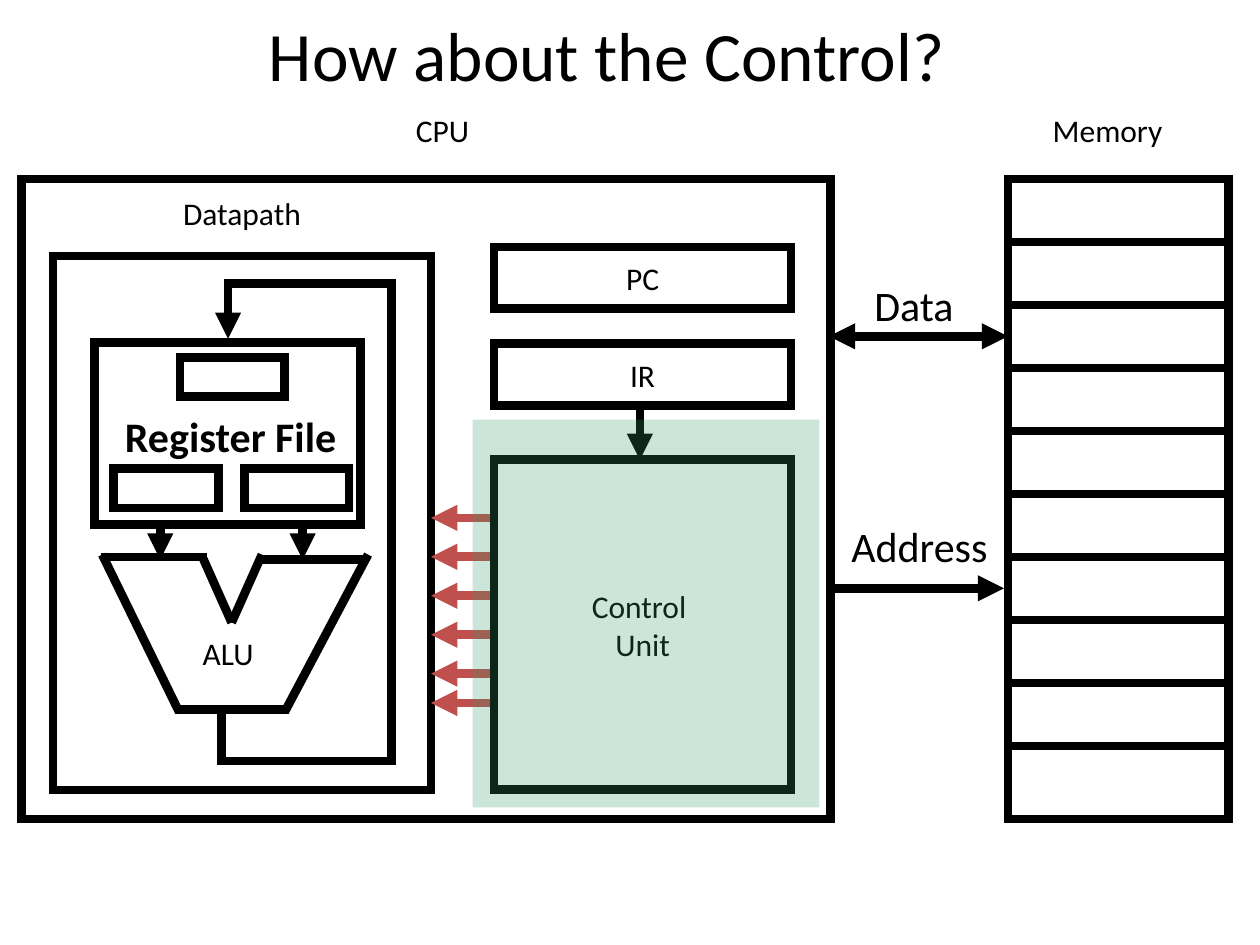
from dataclasses import dataclass

from lxml import etree
from pptx import Presentation
from pptx.dml.color import RGBColor
from pptx.enum.shapes import MSO_CONNECTOR, MSO_SHAPE
from pptx.enum.text import MSO_ANCHOR, PP_ALIGN
from pptx.oxml.ns import qn
from pptx.util import Cm, Pt

STRAIGHT = MSO_CONNECTOR.STRAIGHT
RECTANGLE = MSO_SHAPE.RECTANGLE
MIDDLE, TOP = MSO_ANCHOR.MIDDLE, MSO_ANCHOR.TOP
CENTER = PP_ALIGN.CENTER


@dataclass(frozen=True)
class Theme:
    font: str = "Calibri"
    ink: str = "000000"
    paper: str = "FFFFFF"
    signal: str = "C0504D"
    highlight: str = "339966"
    highlight_opacity: int = 25
    title: float = 39.6
    large: float = 24
    body: float = 18
    stroke: float = 5


THEME = Theme()

TITLE = ("How about the Control?", (2.29, 0.43, 19.89, 1.32))
REGISTER_LABEL = ("Register File", (0.89, 8.15, 7.52, 1.27))
ALU_LABEL = ("ALU", (2.11, 12.65, 4.98, 1.02))
SECTION_LABELS = [
    ("Datapath", (1.07, 3.78, 7.62, 1.02)),
    ("CPU ", (4.45, 2.11, 9.09, 1.02)),
    ("Memory ", (20.24, 2.11, 4.32, 1.02)),
]
BUS_LABELS = [
    ("Data", (16.94, 5.51, 2.97, 1.27)),
    ("Address", (16.31, 10.36, 4.45, 1.27)),
]

ALU_EDGES = [
    (2.03, 11.23, 4.17, 11.23),
    (5.28, 11.28, 7.42, 11.28),
    (3.53, 14.3, 5.82, 14.3),
    (3.61, 14.35, 2.06, 11.18),
    (7.42, 11.18, 5.74, 14.35),
    (4.06, 11.18, 4.67, 12.55),
    (4.67, 12.55, 5.28, 11.18),
]
REGISTER_FILE = (1.91, 6.91, 5.36, 3.66)
REGISTER_SIZE = (2.11, 0.79)
REGISTER_CORNERS = [(3.63, 7.21), (2.29, 9.45), (4.93, 9.45)]
OPERAND_ARROWS = [(x, 10.49, x, 11.28) for x in (3.23, 6.1)]
FEEDBACK = [(4.47, 14.33), (4.47, 15.34), (7.9, 15.34),
            (7.9, 5.72), (4.6, 5.72), (4.6, 6.83)]

DATAPATH = (1.07, 5.16, 7.62, 10.77)
CPU = (0.43, 3.61, 16.31, 12.9)
CONTROL_BOXES = [
    ("PC", (9.96, 4.98, 5.99, 1.24)),
    ("IR", (9.96, 6.93, 5.99, 1.24)),
    ("Control \vUnit", (9.96, 9.27, 5.99, 6.65)),
]
INSTRUCTION_ARROW = (12.9, 8.1, 12.9, 9.27)
SIGNAL_ROWS = [10.44 + 0.785 * row for row in range(5)] + [14.17]
SIGNAL_FROM, SIGNAL_TO = 9.96, 8.69
HIGHLIGHT = (9.53, 8.46, 6.99, 7.82)

MEMORY = (20.32, 3.61, 4.45, 12.9)
MEMORY_CELLS, CELL_HEIGHT = 10, 1.27
DATA_BUS = (16.71, 6.78, 20.32, 6.78)
ADDRESS_BUS = (16.81, 11.86, 20.24, 11.86)


def lengths(values):
    return [Cm(value) for value in values]


def style_line(line, color=THEME.ink, ends=()):
    line.color.rgb = RGBColor.from_string(color)
    line.width = Pt(THEME.stroke)
    outline = line.fill._xPr
    etree.SubElement(outline, qn("a:miter"), lim="800000")
    for end in ends:
        etree.SubElement(outline, qn(f"a:{end}End"), type="triangle")


def add_line(shapes, points, color=THEME.ink, ends=()):
    connector = shapes.add_connector(STRAIGHT, *lengths(points))
    style_line(connector.line, color, ends)
    etree.SubElement(connector._element.spPr, qn("a:effectLst"))


def add_path(shapes, points, ends):
    start, *others = [lengths(point) for point in points]
    builder = shapes.build_freeform(*start)
    builder.add_line_segments(others, close=False)
    path = builder.convert_to_shape()
    path.shadow.inherit = False
    path.fill.background()
    style_line(path.line, ends=ends)


def add_box(shapes, frame, fill=None):
    box = shapes.add_shape(RECTANGLE, *lengths(frame))
    box.shadow.inherit = False
    if fill:
        box.fill.solid()
        box.fill.fore_color.rgb = RGBColor.from_string(fill)
    else:
        box.fill.background()
    style_line(box.line)
    return box


def write(box, text, size, bold=False, anchor=TOP):
    frame = box.text_frame
    frame.word_wrap = True
    frame.vertical_anchor = anchor
    frame.text = text
    for paragraph in frame.paragraphs:
        paragraph.alignment = CENTER
        for span in paragraph.runs:
            span.font.name = THEME.font
            span.font.size = Pt(size)
            span.font.bold = bold
            span.font.color.rgb = RGBColor.from_string(THEME.ink)


def add_label(shapes, label, size, **style):
    text, frame = label
    write(shapes.add_textbox(*lengths(frame)), text, size, **style)


def add_datapath(shapes):
    for edge in ALU_EDGES:
        add_line(shapes, edge)
    add_box(shapes, REGISTER_FILE)
    for corner in REGISTER_CORNERS:
        add_box(shapes, corner + REGISTER_SIZE, THEME.paper)
    for arrow in OPERAND_ARROWS:
        add_line(shapes, arrow, ends=["tail"])
    add_path(shapes, FEEDBACK, ["tail"])
    add_label(shapes, ALU_LABEL, THEME.body)


def add_memory(shapes):
    left, top, width, _ = MEMORY
    add_box(shapes, MEMORY, THEME.paper)
    for cell in range(1, MEMORY_CELLS):
        y = top + cell * CELL_HEIGHT
        add_line(shapes, (left, y, left + width, y))


def add_highlight(shapes):
    box = add_box(shapes, HIGHLIGHT, THEME.highlight)
    box.line.fill.background()
    color = box.fill._xPr.find(f".//{qn('a:srgbClr')}")
    etree.SubElement(color, qn("a:alpha"), val=str(THEME.highlight_opacity * 1000))


def main():
    """Build the slide about the control unit of a processor."""
    deck = Presentation()
    deck.slide_width, deck.slide_height = Cm(25.4), Cm(19.05)
    page = deck.slides.add_slide(deck.slide_layouts[6])
    shapes = page.shapes

    add_label(shapes, TITLE, THEME.title, anchor=MIDDLE)
    add_label(shapes, REGISTER_LABEL, THEME.large, bold=True)
    add_datapath(shapes.add_group_shape().shapes)
    add_box(shapes, DATAPATH)
    add_line(shapes, INSTRUCTION_ARROW, ends=["tail"])
    for y in SIGNAL_ROWS:
        add_line(shapes, (SIGNAL_FROM, y, SIGNAL_TO, y), THEME.signal, ["tail"])
    add_box(shapes, CPU)
    add_memory(shapes.add_group_shape().shapes)
    add_line(shapes, DATA_BUS, ends=["head", "tail"])
    add_line(shapes, ADDRESS_BUS, ends=["tail"])
    for label in SECTION_LABELS:
        add_label(shapes, label, THEME.body)
    for label in BUS_LABELS:
        add_label(shapes, label, THEME.large)
    for text, frame in CONTROL_BOXES:
        write(add_box(shapes, frame), text, THEME.body, anchor=MIDDLE)
    add_highlight(shapes)
    deck.save("out.pptx")


if __name__ == "__main__":
    main()
